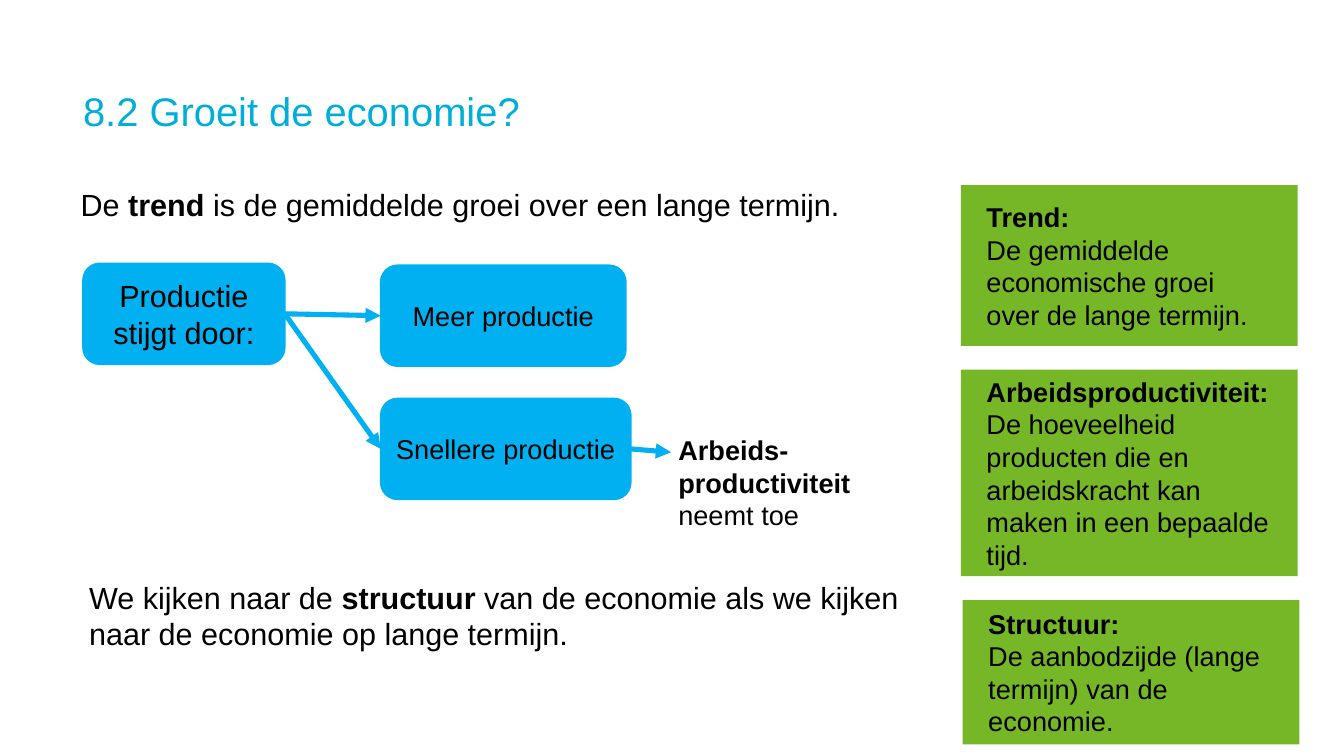
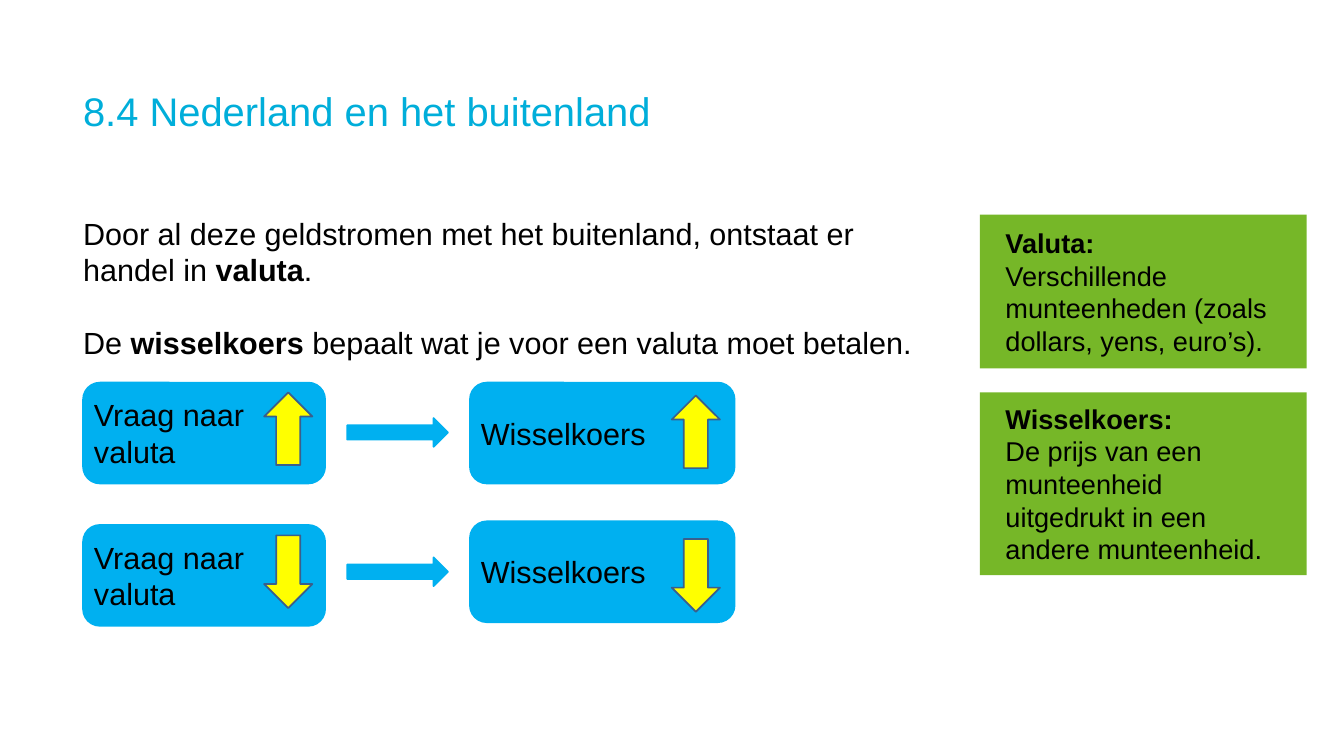
from lxml.etree import SubElement
from pptx import Presentation
from pptx.dml.color import RGBColor
from pptx.enum.shapes import MSO_CONNECTOR as Connector, MSO_SHAPE as Shape
from pptx.enum.text import MSO_ANCHOR as Anchor, PP_ALIGN as Align
from pptx.oxml.ns import qn
from pptx.util import Inches, Pt

FONT = "Arial"
TITLE_BLUE = RGBColor(0x00, 0xAE, 0xDA)
BLUE = RGBColor(0x00, 0xB0, 0xF0)
GREEN = RGBColor(0x76, 0xB7, 0x28)
YELLOW = RGBColor(0xFF, 0xFF, 0x00)
OUTLINE = RGBColor(0x3A, 0x5F, 0x8C)
BLACK = RGBColor(0x00, 0x00, 0x00)

# All places and sizes are percentages of the slide's width and height
MARGIN = 6.18
BLOCK_HEIGHT = 13.34
CARD_GAP = 3.15

presentation = Presentation()
presentation.slide_width = Inches(21.99)
presentation.slide_height = Inches(12.37)
COLUMN = presentation.slide_width / 100
ROW = presentation.slide_height / 100


def place(slide, kind, left, top, width, height, fill=None, line=None):
    """Add a preset shape, or a text box when kind is None."""
    box = [round(length) for length in (left * COLUMN, top * ROW, width * COLUMN, height * ROW)]
    if kind is None:
        return slide.shapes.add_textbox(*box)
    shape = slide.shapes.add_shape(kind, *box)
    shape.shadow.inherit = False
    shape.fill.solid()
    shape.fill.fore_color.rgb = fill
    if line is None:
        shape.line.fill.background()
    else:
        shape.line.color.rgb = line
        shape.line.width = Pt(2)
    return shape


def write(shape, *texts, size=36, color=BLACK, align=Align.LEFT, anchor=Anchor.TOP,
          inset=None, gap=0):
    """Write one paragraph per text; *asterisks* enclose bold words."""
    frame = shape.text_frame
    frame.word_wrap = True
    frame.vertical_anchor = anchor
    if inset is not None:
        frame.margin_left = frame.margin_right = Inches(inset)
        frame.margin_top = frame.margin_bottom = Inches(inset)
    for index, text in enumerate(texts):
        paragraph = frame.add_paragraph() if index else frame.paragraphs[0]
        paragraph.alignment = align
        paragraph.space_before = Pt(gap if index else 0)
        for part, words in enumerate(text.split("*")):
            if words:
                run = paragraph.add_run()
                run.text = words
                run.font.name = FONT
                run.font.size = Pt(size)
                run.font.color.rgb = color
                run.font.bold = part % 2 == 1


# Titles and green definition cards: (left, height, term, definition)
pages = [
    ("8.2 Groeit de economie?", 24.49, 25.06, [
        (71.49, 21.26, "Trend:", "De gemiddelde economische groei over de lange termijn."),
        (71.49, 27.32, "Arbeidsproductiviteit:",
         "De hoeveelheid producten die en arbeidskracht kan maken in een bepaalde tijd."),
        (71.62, 19.08, "Structuur:", "De aanbodzijde (lange termijn) van de economie."),
    ]),
    ("8.4 Nederland en het buitenland", 28.38, 24.33, [
        (72.9, 20.37, "Valuta:", "Verschillende munteenheden (zoals dollars, yens, euro’s)."),
        (72.9, 24.17, "Wisselkoers:",
         "De prijs van een munteenheid uitgedrukt in een andere munteenheid."),
    ]),
]
slides = []
for title, card_top, card_width, cards in pages:
    slide = presentation.slides.add_slide(presentation.slide_layouts[6])
    slides.append(slide)
    write(place(slide, None, MARGIN, 10.99, 87.54, 7.36), title,
          size=47, color=TITLE_BLUE, anchor=Anchor.MIDDLE, inset=0)
    for left, height, term, definition in cards:
        card = place(slide, Shape.RECTANGLE, left, card_top, card_width, height, GREEN)
        write(card, f"*{term}*", definition, size=32, anchor=Anchor.MIDDLE, inset=0.42)
        card_top += height + CARD_GAP

growth_slide, currency_slide = slides

# Growth: sentences
for left, top, width, height, size, text in [
    (5.55, 24.17, 63.48, 5.74, 36, "De *trend* is de gemiddelde groei over een lange termijn."),
    (50.02, 56.91, 17.92, 13.9, 32, "*Arbeids-productiviteit* neemt toe"),
    (MARGIN, 76.15, 63.48, 10.59, 36, "We kijken naar de *structuur* van de economie "
     "als we kijken naar de economie op lange termijn."),
]:
    write(place(growth_slide, None, left, top, width, height), text, size=size)

# Growth: blocks
blocks = []
for left, top, width, size, text in [
    (MARGIN, 34.84, 15.01, 36, "Productie stijgt door:"),
    (28.33, 35.09, 18.24, 32, "Meer productie"),
    (28.33, 52.71, 18.6, 32, "Snellere productie"),
]:
    block = place(growth_slide, Shape.ROUNDED_RECTANGLE, left, top, width, BLOCK_HEIGHT, BLUE, BLUE)
    write(block, text, size=size, align=Align.CENTER, anchor=Anchor.MIDDLE)
    blocks.append(block)

# Growth: arrows, the last one pointing at the sentence
cause, more, faster = blocks
for source, target in [(cause, more), (cause, faster), (faster, None)]:
    arrow = growth_slide.shapes.add_connector(
        Connector.STRAIGHT, 0, 0, round(49.93 * COLUMN), round(59.82 * ROW))
    arrow.begin_connect(source, 3)
    if target is not None:
        arrow.end_connect(target, 1)
    arrow.line.color.rgb = BLUE
    arrow.line.width = Pt(6)
    SubElement(arrow.line._get_or_add_ln(), qn("a:tailEnd"), type="triangle")
    SubElement(arrow._element.spPr, qn("a:effectLst"))

# Currency: sentences
write(place(currency_slide, None, MARGIN, 28.38, 63.12, 20.37),
      "Door al deze geldstromen met het buitenland, ontstaat er handel in *valuta*.",
      "De *wisselkoers* bepaalt wat je voor een valuta moet betalen.", inset=0, gap=43)

# Currency: demand up or down moves the exchange rate the same way
for demand_top, rate_top, link_top, demand_mark_top, rate_mark_top, rotation in [
    (50.61, 50.61, 55.3, 51.9, 52.3, 0),
    (69.44, 68.96, 73.73, 70.82, 71.3, 180),
]:
    for left, top, width, text, mark_left, mark_top in [
        (MARGIN, demand_top, 18.01, "Vraag naar valuta", 19.65, demand_mark_top),
        (34.97, rate_top, 19.69, "Wisselkoers", 49.98, rate_mark_top),
    ]:
        block = place(currency_slide, Shape.ROUNDED_RECTANGLE, left, top, width, BLOCK_HEIGHT,
                      BLUE, BLUE)
        write(block, text, anchor=Anchor.MIDDLE)
        mark = place(currency_slide, Shape.UP_ARROW, mark_left, mark_top, 3.59, 9.62,
                     YELLOW, OUTLINE)
        mark.rotation = rotation
    place(currency_slide, Shape.RIGHT_ARROW, 25.83, link_top, 7.5, 3.8, BLUE, BLUE)

presentation.save("out.pptx")
